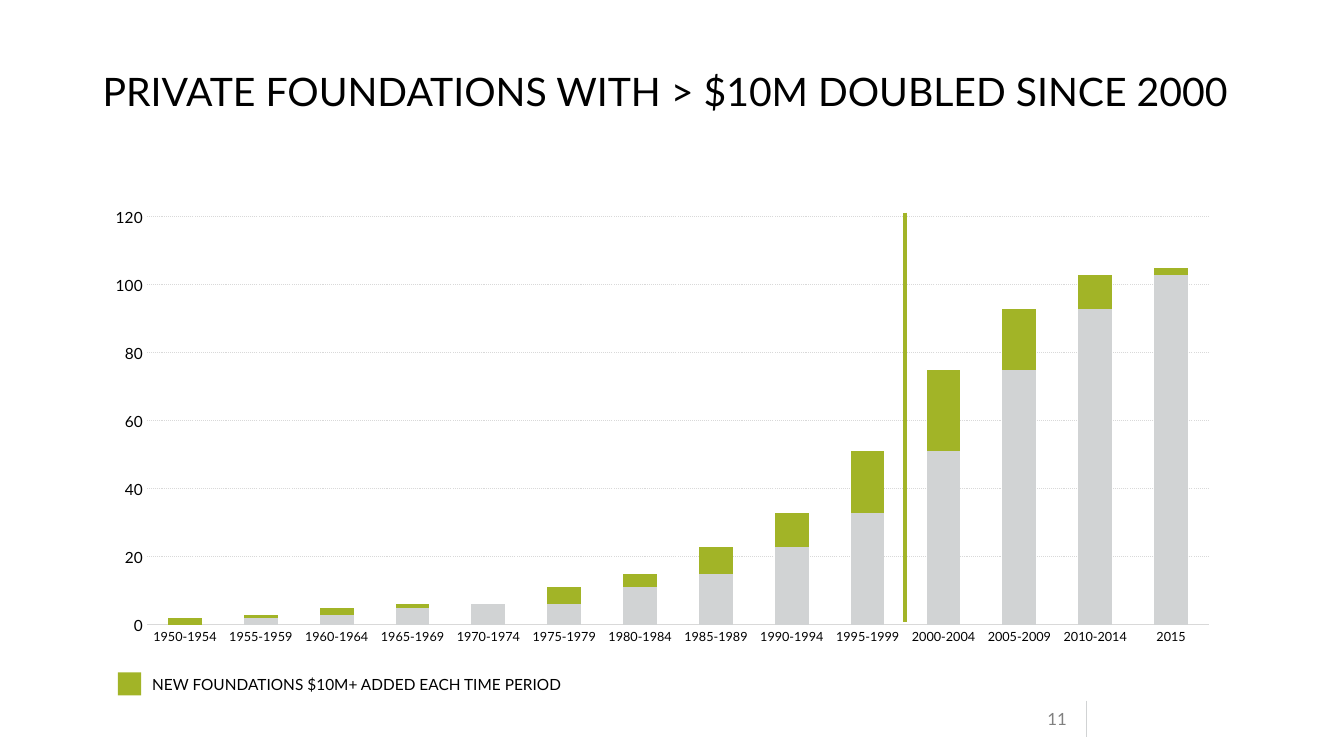
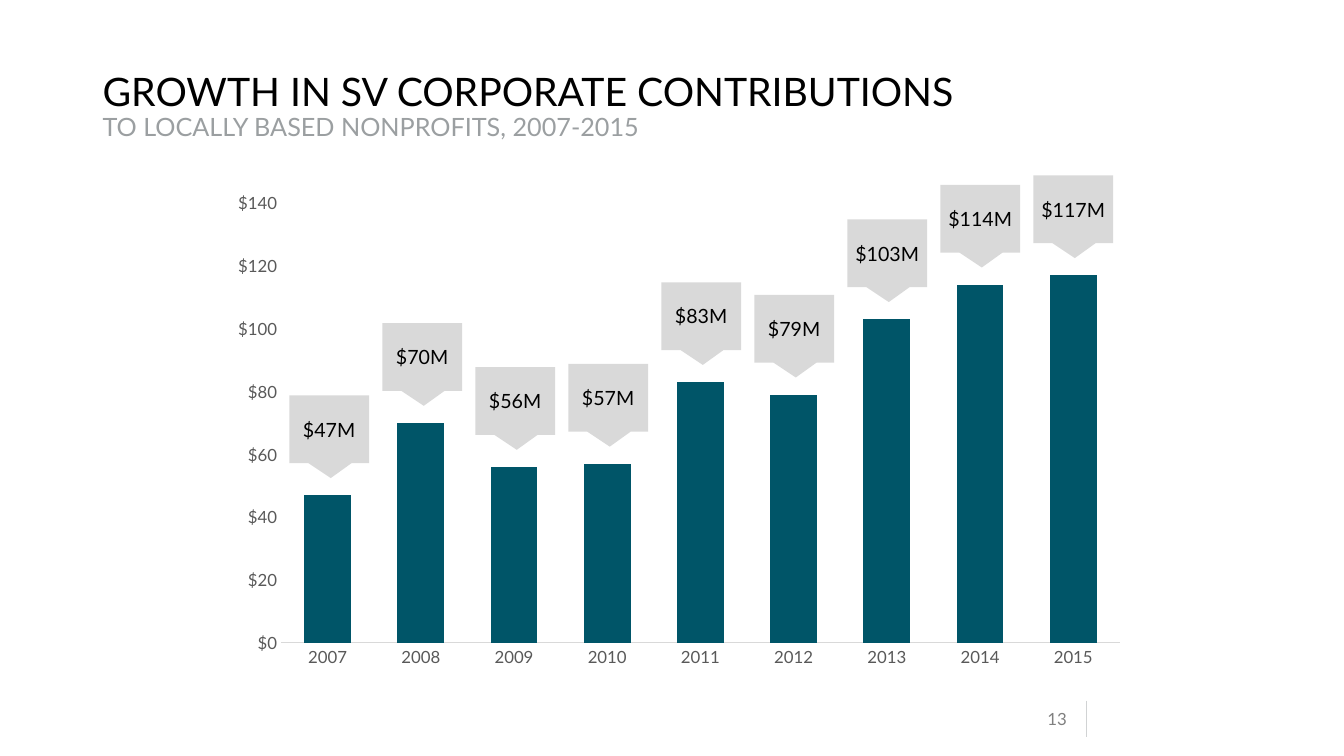
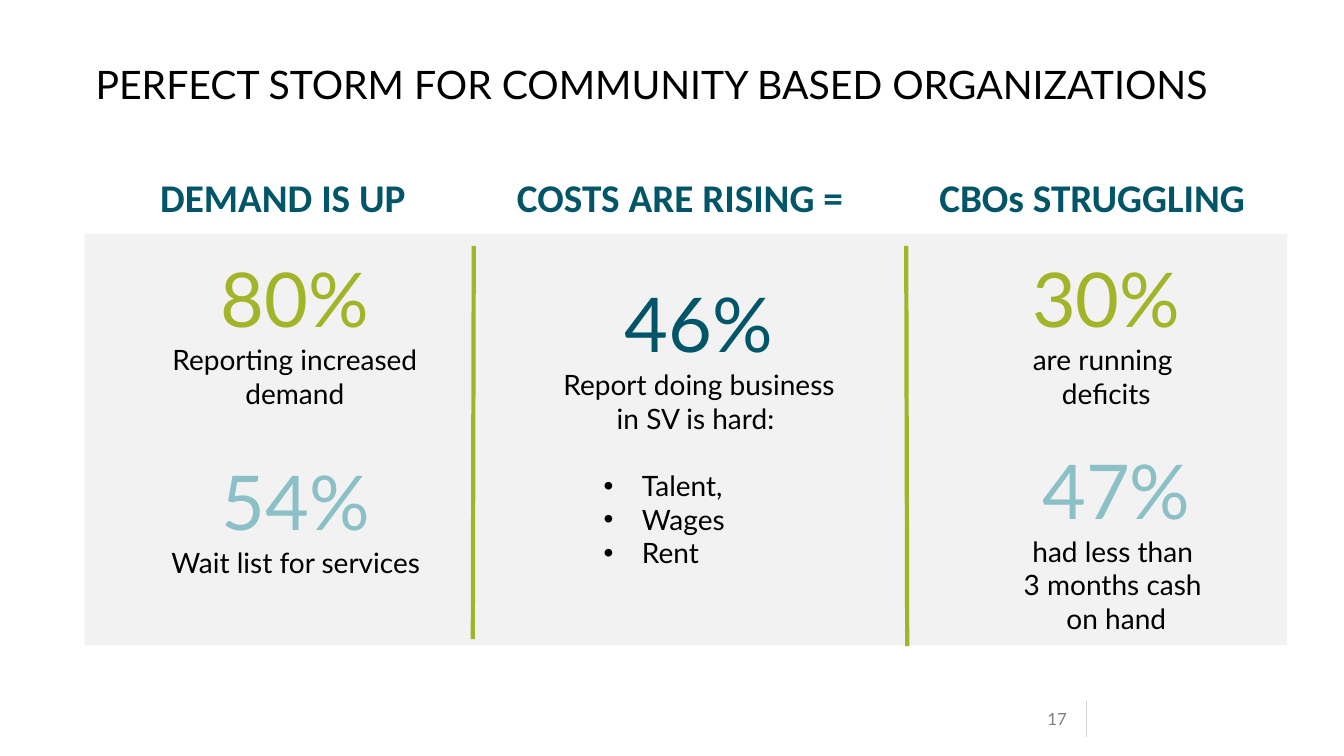
import lxml.etree
import pptx
import pptx.chart.data
import pptx.dml.color
import pptx.enum.chart
import pptx.enum.dml
import pptx.enum.shapes
import pptx.enum.text
import pptx.oxml.ns
import pptx.util

WIDTH = pptx.util.Inches(13.33)
HEIGHT = pptx.util.Inches(7.5)
FONT = "Lato"
HEADING_FONT = "Calibri"
BLACK = "000000"
GREEN = "A2B427"
TEAL = "005568"
AQUA = "8AC0C6"
SILVER = "D1D3D4"
LIGHT_GRAY = "D9D9D9"
PANEL_GRAY = "F2F2F2"
SUBTITLE_GRAY = "9B9FA1"
AXIS_GRAY = "595959"
NUMBER_GRAY = "808080"
ALIGN = pptx.enum.text.PP_ALIGN
ANCHOR = pptx.enum.text.MSO_ANCHOR
CHART_TYPE = pptx.enum.chart.XL_CHART_TYPE
CALLOUT_OUTLINE = [(0, 0), (1, 0), (1, 0.82), (0.78, 0.82), (0.52, 1), (0.24, 0.82), (0, 0.82)]


def across(percent):
    return round(WIDTH * percent / 100)


def down(percent):
    return round(HEIGHT * percent / 100)


def place(box):
    left, top, width, height = box
    return across(left), down(top), across(width), down(height)


def color(value):
    return pptx.dml.color.RGBColor.from_string(value)


def style_font(font, size, ink, name=FONT, bold=False):
    font.size = pptx.util.Pt(size)
    font.name = name
    font.bold = bold
    font.color.rgb = color(ink)


def add_run(paragraph, text, size, ink, name=FONT, bold=False):
    for index, line in enumerate(text.split("\n")):
        if index:
            paragraph.add_line_break()
        if line:
            run = paragraph.add_run()
            run.text = line
            style_font(run.font, size, ink, name, bold)


def fill_shape(shape, fill):
    shape.shadow.inherit = False
    shape.fill.solid()
    shape.fill.fore_color.rgb = color(fill)
    shape.line.fill.background()


def add_text(slide, box, paragraphs, align=ALIGN.LEFT, anchor=ANCHOR.TOP):
    frame = slide.shapes.add_textbox(*place(box)).text_frame
    frame.word_wrap = True
    frame.vertical_anchor = anchor
    for index, runs in enumerate(paragraphs):
        paragraph = frame.add_paragraph() if index else frame.paragraphs[0]
        paragraph.alignment = align
        for run in runs:
            add_run(paragraph, *run)
    return frame


def add_bullets(frame, items, size, space_before):
    for index, item in enumerate(items):
        paragraph = frame.add_paragraph()
        paragraph.alignment = ALIGN.LEFT
        if index == 0:
            paragraph.space_before = pptx.util.Pt(space_before)
        properties = paragraph._p.get_or_add_pPr()
        properties.set("marL", str(pptx.util.Inches(0.88)))
        properties.set("indent", str(pptx.util.Inches(-0.38)))
        bullet_font = lxml.etree.SubElement(properties, pptx.oxml.ns.qn("a:buFont"))
        bullet_font.set("typeface", "Arial")
        bullet = lxml.etree.SubElement(properties, pptx.oxml.ns.qn("a:buChar"))
        bullet.set("char", "•")
        add_run(paragraph, item, size, BLACK)


def add_rectangle(slide, box, fill):
    rectangle = pptx.enum.shapes.MSO_SHAPE.RECTANGLE
    fill_shape(slide.shapes.add_shape(rectangle, *place(box)), fill)


def add_line(slide, start, end, ink, weight):
    line = slide.shapes.add_connector(
        pptx.enum.shapes.MSO_CONNECTOR.STRAIGHT,
        across(start[0]), down(start[1]), across(end[0]), down(end[1]))
    line.line.color.rgb = color(ink)
    line.line.width = pptx.util.Pt(weight)
    lxml.etree.SubElement(line._element.spPr, pptx.oxml.ns.qn("a:effectLst"))


def add_callout(slide, box, text):
    left, top, width, height = place(box)
    points = [(left + round(width * x), top + round(height * y)) for x, y in CALLOUT_OUTLINE]
    builder = slide.shapes.build_freeform(*points[0])
    builder.add_line_segments(points[1:])
    callout = builder.convert_to_shape()
    fill_shape(callout, LIGHT_GRAY)
    frame = callout.text_frame
    frame.word_wrap = True
    frame.vertical_anchor = ANCHOR.MIDDLE
    frame.margin_left = frame.margin_right = frame.margin_top = 0
    frame.margin_bottom = pptx.util.Inches(0.15)
    frame.paragraphs[0].alignment = ALIGN.CENTER
    add_run(frame.paragraphs[0], text, 14, BLACK)


def add_slide(presentation, number, title, subtitle="", title_at=(6.9, 8.93)):
    slide = presentation.slides.add_slide(presentation.slide_layouts[6])
    add_line(slide, (80.85, 92.67), (80.85, 97.47), SILVER, 1)
    add_text(slide, (75.53, 92.67, 4.58, 4.8), [[(number, 12, NUMBER_GRAY)]],
             ALIGN.RIGHT, ANCHOR.MIDDLE)
    runs = [(title, 28, BLACK)]
    if subtitle:
        runs.append(("\n" + subtitle, 18, SUBTITLE_GRAY))
    frame = add_text(slide, (*title_at, 86.25, 8), [runs])
    frame.paragraphs[0].line_spacing = 0.9
    return slide


def set_plot_area(chart, box, plot):
    area = chart.element.find(".//" + pptx.oxml.ns.qn("c:plotArea"))
    for old in area.findall(pptx.oxml.ns.qn("c:layout")):
        area.remove(old)
    layout = lxml.etree.Element(pptx.oxml.ns.qn("c:layout"))
    manual = lxml.etree.SubElement(layout, pptx.oxml.ns.qn("c:manualLayout"))
    settings = {
        "layoutTarget": "inner", "xMode": "edge", "yMode": "edge",
        "x": (plot[0] - box[0]) / box[2], "y": (plot[1] - box[1]) / box[3],
        "w": plot[2] / box[2], "h": plot[3] / box[3]}
    for name, value in settings.items():
        lxml.etree.SubElement(manual, pptx.oxml.ns.qn("c:" + name)).set("val", str(value))
    area.insert(0, layout)


def style_axis(axis, size, ink):
    axis.major_tick_mark = axis.minor_tick_mark = pptx.enum.chart.XL_TICK_MARK.NONE
    style_font(axis.tick_labels.font, size, ink)


def add_column_chart(slide, kind, box, plot, categories, series, gap, overlap,
                     maximum, number_format, label_sizes, label_ink, grid):
    data = pptx.chart.data.CategoryChartData()
    data.categories = categories
    for index, (values, fill) in enumerate(series, 1):
        data.add_series(f"Series {index}", values)
    chart = slide.shapes.add_chart(kind, *place(box), data).chart
    chart.has_title = False
    chart.has_legend = False
    style_font(chart.font, 10, BLACK)
    bars = chart.plots[0]
    bars.gap_width = gap
    bars.overlap = overlap
    bars.vary_by_categories = False
    for columns, (values, fill) in zip(bars.series, series):
        columns.format.fill.solid()
        columns.format.fill.fore_color.rgb = color(fill)
    category_axis, value_axis = chart.category_axis, chart.value_axis
    style_axis(category_axis, label_sizes[0], label_ink)
    style_axis(value_axis, label_sizes[1], label_ink)
    value_axis.minimum_scale = 0
    value_axis.maximum_scale = maximum
    value_axis.major_unit = 20
    value_axis.tick_labels.number_format = number_format
    value_axis.tick_labels.number_format_is_linked = False
    value_axis.format.line.fill.background()
    value_axis.has_major_gridlines = grid
    lines = [category_axis.format.line]
    if grid:
        lines.append(value_axis.major_gridlines.format.line)
        lines[1].dash_style = pptx.enum.dml.MSO_LINE.ROUND_DOT
    for line in lines:
        line.color.rgb = color(LIGHT_GRAY)
        line.width = pptx.util.Pt(0.75)
    set_plot_area(chart, box, plot)


def build_foundations(presentation):
    slide = add_slide(presentation, "11", "PRIVATE FOUNDATIONS WITH > $10M DOUBLED SINCE 2000")
    periods = [f"{year}-{year + 4}" for year in range(1950, 2015, 5)] + ["2015"]
    existing = [0, 2, 3, 5, 6, 6, 11, 15, 23, 33, 51, 75, 93, 103]
    added = [2, 1, 2, 1, 0, 5, 4, 8, 10, 18, 24, 18, 10, 2]
    add_column_chart(
        slide, CHART_TYPE.COLUMN_STACKED, (6.9, 26.27, 84.83, 60.13),
        (10.94, 28.71, 79.02, 53.97), periods, [(existing, SILVER), (added, GREEN)],
        125, 100, 120, "General", (9, 11), BLACK, True)
    add_rectangle(slide, (8.78, 88.93, 1.73, 3.07), GREEN)
    add_text(slide, (10.58, 88.67, 34.58, 3.87),
             [[("NEW FOUNDATIONS $10M+ ADDED EACH TIME PERIOD", 11, BLACK)]])
    add_line(slide, (67.35, 28.13), (67.35, 82.27), GREEN, 3)


def build_contributions(presentation):
    slide = add_slide(presentation, "13", "GROWTH IN SV CORPORATE CONTRIBUTIONS",
                      "TO LOCALLY BASED NONPROFITS, 2007-2015")
    years = [str(year) for year in range(2007, 2016)]
    millions = [47, 70, 56, 57, 83, 79, 103, 114, 117]
    maximum = 140
    plot = (20.91, 26.85, 62.42, 58.2)
    add_column_chart(
        slide, CHART_TYPE.COLUMN_CLUSTERED, (16.35, 24.27, 68.33, 65.33), plot,
        years, [(millions, TEAL)], 99, -27, maximum, '"$"#,##0', (12, 12), AXIS_GRAY, False)
    for index, value in enumerate(millions):
        bar_top = plot[1] + plot[3] * (1 - value / maximum)
        add_callout(slide, (21.53 + 6.92 * index, bar_top - 13.2, 5.93, 10.93), f"${value}M")


def add_statistic(slide, box, figure, ink, label):
    return add_text(slide, box, [[(figure, 54, ink)], [(label, 20, BLACK)]], ALIGN.CENTER)


def build_storm(presentation):
    slide = add_slide(presentation, "17", "PERFECT STORM FOR COMMUNITY BASED ORGANIZATIONS",
                      title_at=(6.38, 8))
    add_rectangle(slide, (6.3, 30.93, 89.48, 54.4), PANEL_GRAY)
    add_line(slide, (35.25, 32.53), (35.18, 84.53), GREEN, 3)
    add_line(slide, (67.43, 32.53), (67.5, 85.47), GREEN, 3)
    headings = [(11.18, 20.7, "DEMAND IS UP"), (37.73, 31.65, "COSTS ARE RISING ="),
                (69.15, 25.35, "CBOs STRUGGLING")]
    for left, width, heading in headings:
        add_text(slide, (left, 22.27, width, 7.6), [[(heading, 28, TEAL, HEADING_FONT, True)]])
    statistics = [
        ((11.93, 32.67, 20.03, 26.93), "80%", GREEN, "Reporting increased demand"),
        ((12, 59.47, 20.03, 18), "54%", AQUA, "Wait list for services"),
        ((72.3, 32.67, 20.03, 26.93), "30%", GREEN, "are running \ndeficits"),
        ((73.05, 58, 20.03, 26.93), "47%", AQUA, "had less than \n3 months cash \non hand")]
    for statistic in statistics:
        add_statistic(slide, *statistic)
    costs = add_statistic(slide, (40.43, 36, 23.18, 40.4), "46%", TEAL,
                          "Report doing business in SV is hard: ")
    add_bullets(costs, ["Talent,", "Wages", "Rent"], 20, 24)


def main():
    presentation = pptx.Presentation()
    presentation.slide_width = WIDTH
    presentation.slide_height = HEIGHT
    build_foundations(presentation)
    build_contributions(presentation)
    build_storm(presentation)
    presentation.save("out.pptx")


if __name__ == "__main__":
    main()
